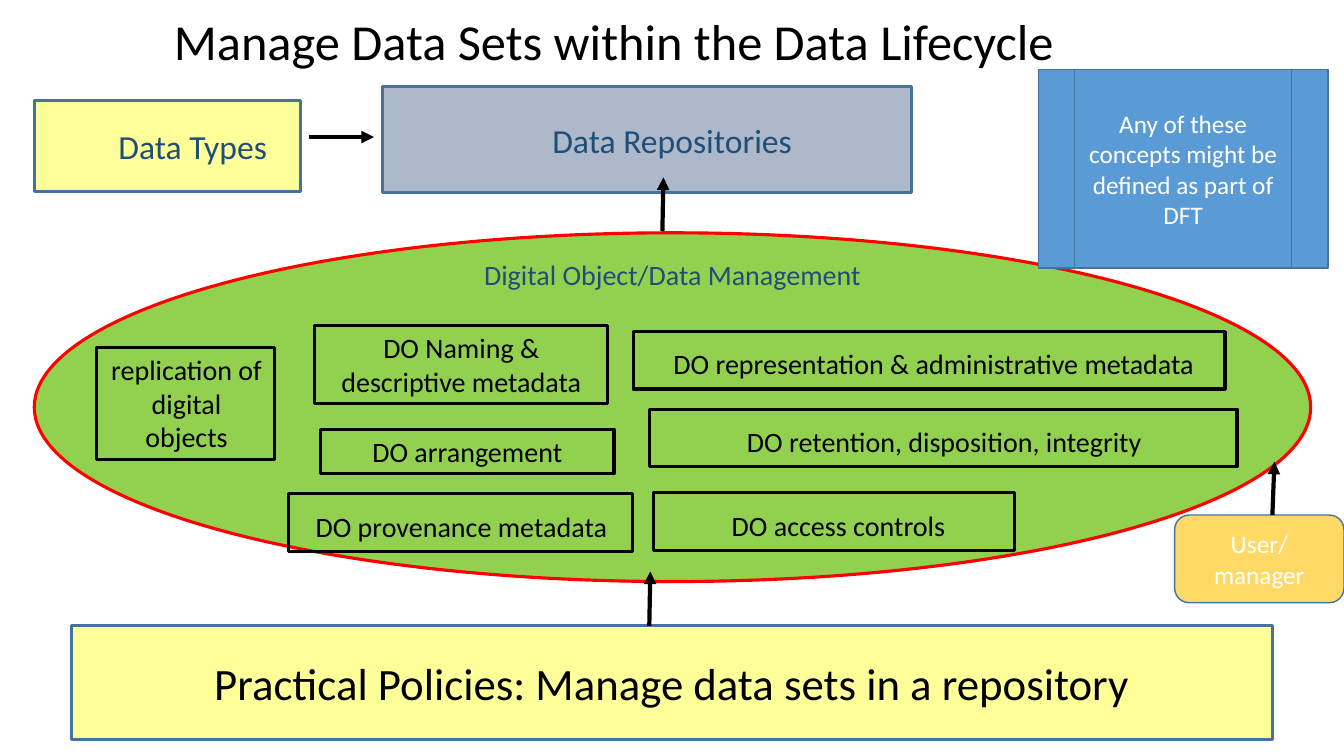
from dataclasses import dataclass

from lxml.etree import SubElement
from pptx import Presentation
from pptx.dml.color import RGBColor
from pptx.enum.shapes import MSO_CONNECTOR, MSO_SHAPE as SHAPE
from pptx.enum.text import MSO_ANCHOR as ANCHOR, MSO_AUTO_SIZE, PP_ALIGN
from pptx.oxml.ns import qn
from pptx.util import Pt

EMU_PER_PX = 9144  # 100 px to the inch
FONT = "Calibri"

BLACK = RGBColor(0x00, 0x00, 0x00)
WHITE = RGBColor(0xFF, 0xFF, 0xFF)
NAVY = RGBColor(0x1F, 0x4E, 0x79)
EDGE = RGBColor(0x43, 0x73, 0x9E)
RED = RGBColor(0xFF, 0x00, 0x00)
GREEN = RGBColor(0x92, 0xD0, 0x50)
YELLOW = RGBColor(0xFF, 0xFF, 0x99)
GREY = RGBColor(0xAD, 0xB9, 0xCA)
GOLD = RGBColor(0xFF, 0xD9, 0x66)
BLUE = RGBColor(0x5B, 0x9B, 0xD5)


@dataclass
class Box:
    text: str
    at: tuple[int, int, int, int]
    fill: RGBColor | None = None
    edge: RGBColor | None = EDGE
    weight: float = 2.25
    size: int = 20
    color: RGBColor = BLACK
    kind: SHAPE = SHAPE.RECTANGLE
    anchor: ANCHOR = ANCHOR.MIDDLE
    left: int = 10
    top: int = 5


@dataclass
class Arrow:
    start: tuple[int, int]
    end: tuple[int, int]


def px(n: int) -> int:
    return n * EMU_PER_PX


def concept(text: str, at: tuple[int, int, int, int], left: int = 10, top: int = 5) -> Box:
    """Outlined box for one data management concept."""
    return Box(text, at, edge=BLACK, anchor=ANCHOR.TOP, left=left, top=top)


def write(s, text: str, size: int, color: RGBColor, **frame) -> None:
    tf = s.text_frame
    tf.text = text
    settings = {"word_wrap": True, "auto_size": MSO_AUTO_SIZE.NONE,
                "vertical_anchor": ANCHOR.MIDDLE, **frame}
    for name, value in settings.items():
        setattr(tf, name, value)
    for p in tf.paragraphs:
        p.alignment = PP_ALIGN.CENTER
        for r in p.runs:
            for name, value in {"name": FONT, "size": Pt(size)}.items():
                setattr(r.font, name, value)
            r.font.color.rgb = color


def draw_box(shapes, box: Box) -> None:
    s = shapes.add_shape(box.kind, *map(px, box.at))
    s.shadow.inherit = False
    if box.fill is None:
        s.fill.background()
    else:
        s.fill.solid()
        s.fill.fore_color.rgb = box.fill
    if box.edge is None:
        s.line.fill.background()
    else:
        s.line.color.rgb = box.edge
        s.line.width = Pt(box.weight)
    if box.text:
        write(s, box.text, box.size, box.color, vertical_anchor=box.anchor,
              margin_left=px(box.left), margin_top=px(box.top))


def draw_arrow(shapes, arrow: Arrow) -> None:
    c = shapes.add_connector(MSO_CONNECTOR.STRAIGHT, *map(px, arrow.start + arrow.end))
    c.line.color.rgb = BLACK
    c.line.width = Pt(3)
    SubElement(c.line._get_or_add_ln(), qn("a:tailEnd"), type="triangle")
    SubElement(c._element.spPr, qn("a:effectLst"))


BOXES = [
    # Digital object area and its heading
    Box("", (34, 231, 1266, 346), GREEN, RED, kind=SHAPE.OVAL),
    Box("Digital Object/Data Management", (434, 250, 466, 44), edge=None, color=NAVY),
    # Types, repositories and policies
    Box("Data Types", (34, 100, 264, 90), YELLOW, size=24, color=NAVY, left=60),
    Box("Data Repositories", (379, 86, 525, 105), GREY, size=24, color=NAVY, left=60),
    Box("Practical Policies: Manage data sets in a repository",
        (71, 621, 1191, 113), YELLOW, size=32),
    # Concepts inside the area
    concept("replication of digital objects", (96, 345, 176, 111), left=12),
    concept("DO Naming & descriptive metadata", (312, 323, 291, 77)),
    concept("DO arrangement", (318, 426, 291, 44)),
    concept("DO provenance metadata", (286, 490, 341, 57), left=12, top=15),
    concept("DO representation & administrative metadata", (628, 329, 587, 57), left=19, top=15),
    concept("DO retention, disposition, integrity", (644, 406, 583, 57), left=12, top=15),
    concept("DO access controls", (648, 489, 358, 57), left=19, top=15),
    # User and side note
    Box("User/\nmanager", (1165, 511, 168, 87), GOLD, weight=1, size=18, color=WHITE,
        kind=SHAPE.ROUNDED_RECTANGLE),
    Box("Any of these concepts might be defined as part of DFT", (1030, 69, 287, 197),
        BLUE, weight=1, size=18, color=WHITE, kind=SHAPE.FLOWCHART_PREDEFINED_PROCESS),
]

ARROWS = [
    Arrow((306, 136), (371, 136)),    # types to repositories
    Arrow((657, 229), (658, 176)),    # area to repositories
    Arrow((644, 621), (645, 567)),    # policies to area
    Arrow((1262, 511), (1264, 458)),  # user to area
]


def main() -> None:
    prs = Presentation()
    prs.slide_width, prs.slide_height = px(1333), px(750)
    slide = prs.slides.add_slide(prs.slide_layouts[5])

    # Title
    title = slide.shapes.title
    for name, value in zip(("left", "top", "width", "height"), (34, 4, 1150, 79)):
        setattr(title, name, px(value))
    write(title, "Manage Data Sets within the Data Lifecycle", 36, BLACK)
    title.text_frame.paragraphs[0].line_spacing = 0.9

    # Diagram
    for box in BOXES:
        draw_box(slide.shapes, box)
    for arrow in ARROWS:
        draw_arrow(slide.shapes, arrow)

    prs.save("out.pptx")


if __name__ == "__main__":
    main()
